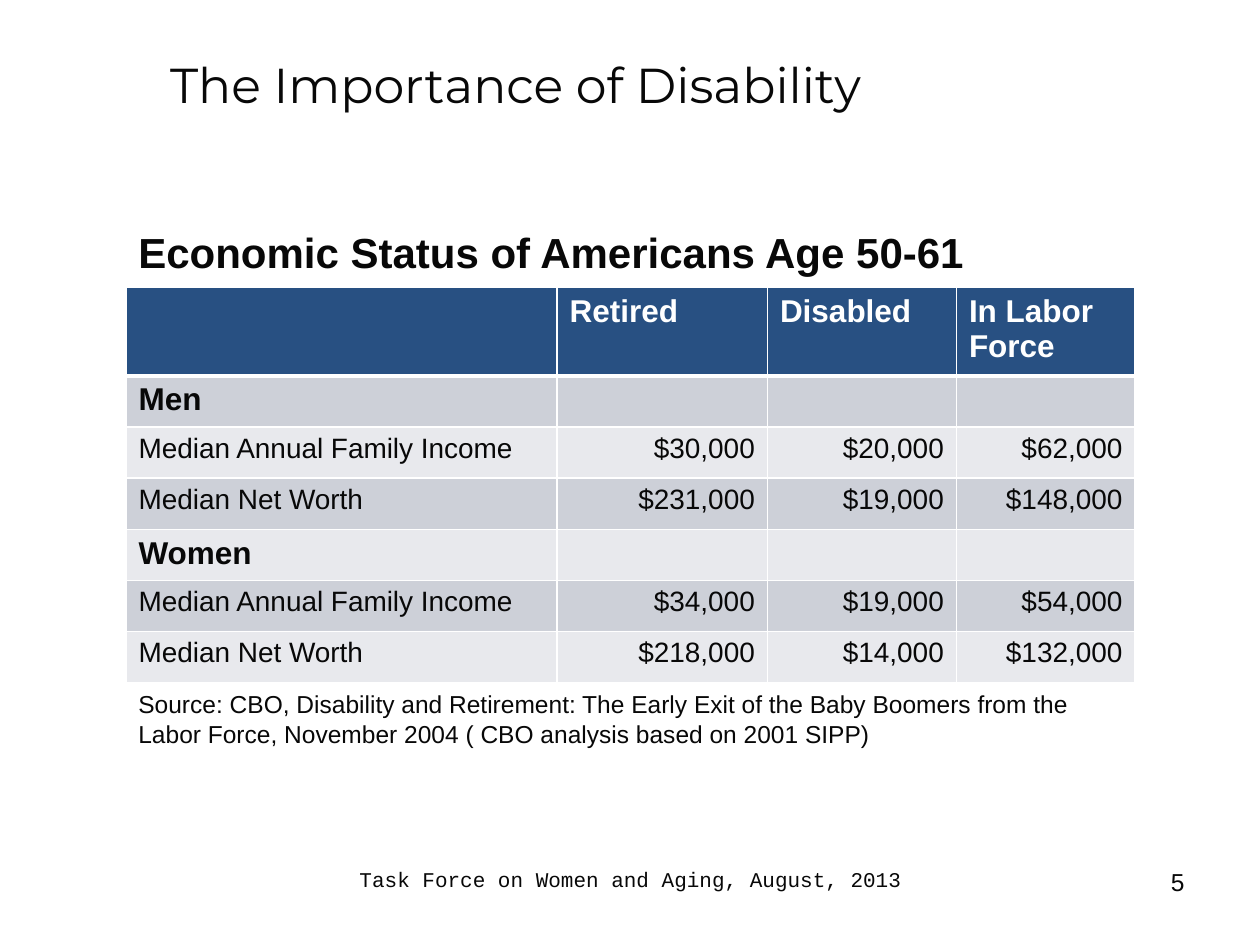
from dataclasses import dataclass

from lxml.etree import SubElement
from pptx import Presentation
from pptx.dml.color import RGBColor as RGB
from pptx.enum.text import MSO_ANCHOR as Anchor, PP_ALIGN as Align
from pptx.oxml.ns import qn
from pptx.util import Cm, Pt


@dataclass(frozen=True)
class Theme:
    """Colours, fonts and type sizes of the slide."""
    ink: str = "080808"
    white: str = "FFFFFF"
    header: str = "285082"
    bands: tuple = ("CDD0D8", "E8E9ED")
    body: str = "Arial"
    display: str = "Montserrat"
    mono: str = "Courier New"
    title: int = 28
    heading: int = 24
    group: int = 18
    cell: int = 16
    note: int = 14
    footer: int = 12
    rule: int = 1
    header_rule: int = 3


THEME = Theme()
COLUMN_WIDTHS = (8.69, 4.24, 3.81, 3.6)
HEADER_HEIGHT = 1.68
ROW_HEIGHT = 1.03
STATUS = (
    ("", "Retired", "Disabled", "In Labor Force"),
    ("Men", "", "", ""),
    ("Median Annual Family Income", "$30,000", "$20,000", "$62,000"),
    ("Median Net Worth", "$231,000", "$19,000", "$148,000"),
    ("Women", "", "", ""),
    ("Median Annual Family Income", "$34,000", "$19,000", "$54,000"),
    ("Median Net Worth", "$218,000", "$14,000", "$132,000"),
)


def style(p, size, font=THEME.body, color=THEME.ink, bold=False, align=Align.LEFT):
    """Set the font and alignment of a paragraph."""
    p.alignment = align
    p.font.size, p.font.name, p.font.bold = Pt(size), font, bold
    p.font.color.rgb = RGB.from_string(color)


def add_text(slide, box, text, size, wrap=True, anchor=Anchor.TOP, **look):
    """Add one paragraph of text in a box given in centimetres."""
    tf = slide.shapes.add_textbox(*map(Cm, box)).text_frame
    tf.word_wrap, tf.vertical_anchor = wrap, anchor
    p = tf.paragraphs[0]
    p.text = text
    style(p, size, **look)


def add_borders(cell, top, bottom):
    """Draw white cell borders, with top and bottom widths in points."""
    tc_pr = cell._tc.get_or_add_tcPr()
    sides = {"L": THEME.rule, "R": THEME.rule, "T": top, "B": bottom}
    for side, width in sides.items():
        ln = SubElement(tc_pr, qn(f"a:ln{side}"), w=str(Pt(width)))
        fill = SubElement(ln, qn("a:solidFill"))
        SubElement(fill, qn("a:srgbClr"), val=THEME.white)


def fill_cell(cell, text, row, col, is_group):
    """Write and format one cell of the status table."""
    is_header = row == 0
    add_borders(cell,
                THEME.header_rule if row == 1 else THEME.rule,
                THEME.header_rule if is_header else THEME.rule)
    cell.fill.solid()
    color = THEME.header if is_header else THEME.bands[(row - 1) % 2]
    cell.fill.fore_color.rgb = RGB.from_string(color)
    strong = is_header or is_group
    p = cell.text_frame.paragraphs[0]
    p.text = text
    style(p, THEME.group if strong else THEME.cell, bold=strong,
          color=THEME.white if is_header else THEME.ink,
          align=Align.RIGHT if col and not is_header else Align.LEFT)


def add_status_table(slide, left, top):
    """Add the economic status table with its corner at the given point."""
    heights = [HEADER_HEIGHT] + [ROW_HEIGHT] * (len(STATUS) - 1)
    table = slide.shapes.add_table(
        len(STATUS), len(COLUMN_WIDTHS), Cm(left), Cm(top),
        Cm(sum(COLUMN_WIDTHS)), Cm(sum(heights))).table
    for column, width in zip(table.columns, COLUMN_WIDTHS):
        column.width = Cm(width)
    for row, (height, texts) in enumerate(zip(heights, STATUS)):
        table.rows[row].height = Cm(height)
        for col, text in enumerate(texts):
            fill_cell(table.cell(row, col), text, row, col, not any(texts[1:]))


def add_status_region(slide, left, top, width):
    """Add the heading, the table and the source note below one another."""
    add_text(slide, (left, top, 17.32, 2.06), "Economic Status of Americans Age 50-61",
             THEME.heading, wrap=False, bold=True)
    add_status_table(slide, left, top + 1.35)
    add_text(slide, (left, top + 9.32, width, 1.45),
             "Source: CBO, Disability and Retirement: The Early Exit of the Baby Boomers "
             "from the Labor Force, November 2004 ( CBO analysis based on 2001 SIPP)",
             THEME.note)


def add_footer(slide, left, top, height):
    """Add the centred event line and the slide number."""
    add_text(slide, (left, top, 11.86, height), "Task Force on Women and Aging, August, 2013",
             THEME.footer, font=THEME.mono, align=Align.CENTER)
    add_text(slide, (left + 11.43, top, 5.92, height), "5", THEME.note, align=Align.RIGHT)


def main():
    """Build the slide and save it."""
    prs = Presentation()
    prs.slide_width, prs.slide_height = Cm(25.4), Cm(19.05)
    slide = prs.slides.add_slide(prs.slide_layouts[6])
    add_text(slide, (3.18, 0.43, 20.96, 2.54), "The Importance of Disability",
             THEME.title, anchor=Anchor.MIDDLE, font=THEME.display)
    add_status_region(slide, 2.54, 4.45, 20.32)
    add_footer(slide, 6.78, 17.35, 1.32)
    prs.save("out.pptx")


if __name__ == "__main__":
    main()
